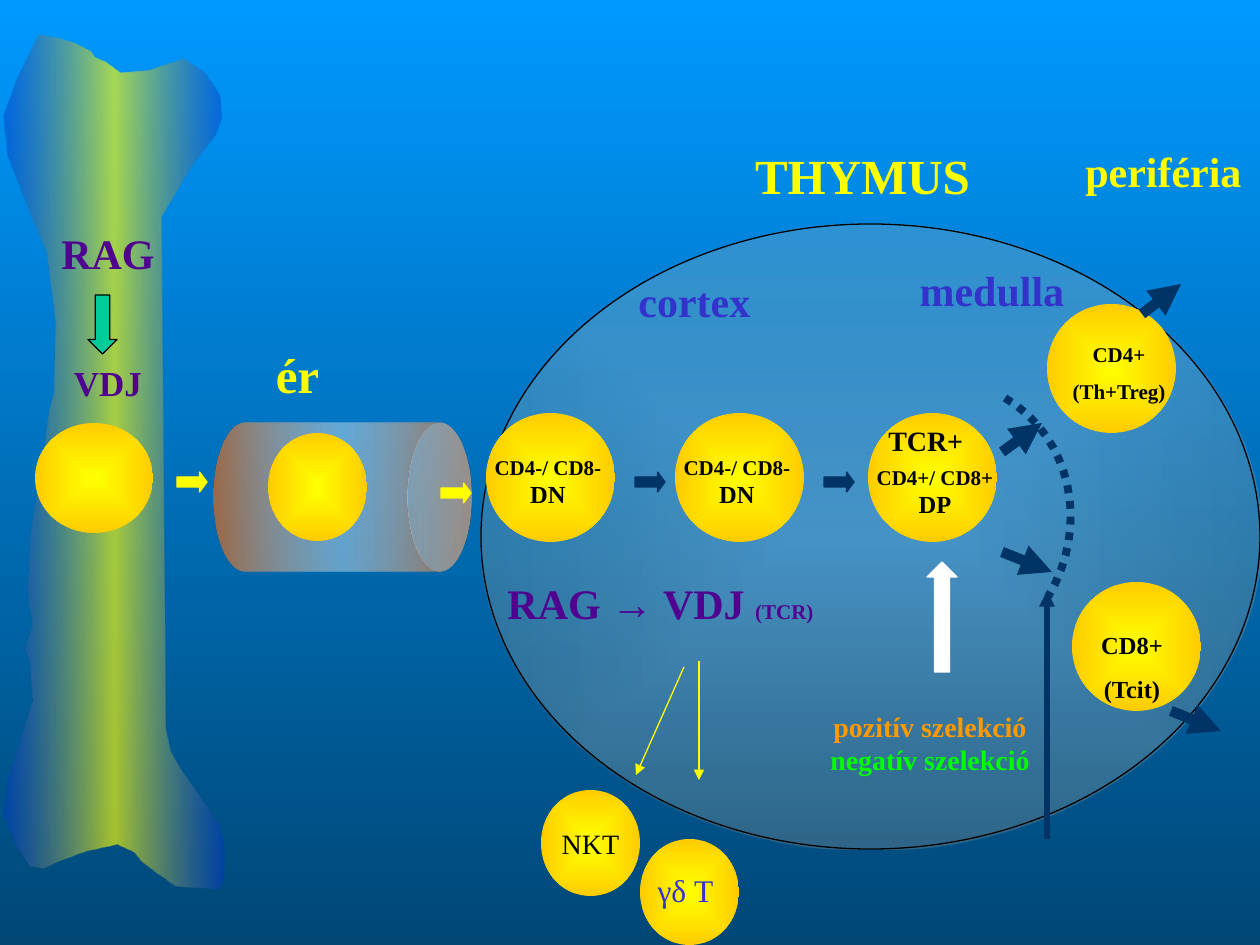
from dataclasses import dataclass
from typing import Any

from lxml import etree
from pptx import Presentation
from pptx import util as u
from pptx.dml import color as dml
from pptx.enum import dml as line_styles
from pptx.enum import shapes, text
from pptx.oxml import ns

PX = u.Inches(1) / 126
FONT = "Times New Roman"
COLORS = {
    "sky": "0099FF", "deep": "004776", "yellow": "FFFF00", "gold": "FFCC00",
    "navy": "003366", "purple": "4F018F", "blue": "3333CC", "black": "000000",
    "white": "FFFFFF", "orange": "FF9900", "green": "00FF00", "teal": "00CC99",
    "rust": "FF6600", "peach": "FFCC99", "cobalt": "0033CC",
}
CELL_STOPS = [(0, "yellow", 100), (100, "gold", 100)]
BONE_OUTLINE = [
    (25, 650), (33, 624), (28, 597), (31, 531), (42, 466), (49, 413), (54, 393),
    (56, 323), (47, 253), (30, 212), (8, 156), (4, 116), (18, 78), (33, 47),
    (39, 35), (57, 38), (76, 44), (91, 52), (95, 58), (105, 62), (120, 73),
    (147, 71), (168, 64), (183, 59), (204, 73), (214, 88), (219, 96), (221, 118),
    (215, 135), (190, 168), (161, 217), (165, 728), (170, 751), (180, 769),
    (209, 810), (212, 818), (219, 823), (224, 852), (223, 881), (218, 889),
    (175, 886), (154, 871), (141, 861), (134, 852), (117, 844), (86, 851),
    (59, 861), (44, 868), (30, 866), (15, 842), (4, 815), (9, 777), (20, 742),
    (28, 716), (33, 701), (30, 660),
]


def px(value):
    """Turn pixels into EMU."""
    return u.Emu(round(value * PX))


def rgb(name):
    """Look up a named colour."""
    return dml.RGBColor.from_string(COLORS[name])


def fill_gradient(shape, stops, angle=None):
    """Fill with (position, colour, opacity) stops, radially if no angle is given."""
    shape.fill.solid()
    properties = shape.element.spPr
    gradient = etree.Element(ns.qn("a:gradFill"), rotWithShape="1")
    stop_list = etree.SubElement(gradient, ns.qn("a:gsLst"))
    for position, name, opacity in stops:
        stop = etree.SubElement(stop_list, ns.qn("a:gs"), pos=str(position * 1000))
        color = etree.SubElement(stop, ns.qn("a:srgbClr"), val=COLORS[name])
        if opacity < 100:
            etree.SubElement(color, ns.qn("a:alpha"), val=str(opacity * 1000))
    if angle is None:
        path = etree.SubElement(gradient, ns.qn("a:path"), path="shape")
        etree.SubElement(path, ns.qn("a:fillToRect"), dict.fromkeys("ltrb", "50000"))
    else:
        etree.SubElement(gradient, ns.qn("a:lin"), ang=str(angle * 60000), scaled="0")
    properties.replace(properties.find(ns.qn("a:solidFill")), gradient)


def write(frame, paragraphs, align=text.PP_ALIGN.CENTER):
    """Write (wording, size, colour, bold, space before) paragraphs."""
    for index, (wording, size, color, bold, before) in enumerate(paragraphs):
        paragraph = frame.add_paragraph() if index else frame.paragraphs[0]
        paragraph.text = wording
        paragraph.alignment = align
        paragraph.space_before = u.Pt(before)
        font = paragraph.font
        font.name, font.size, font.bold = FONT, u.Pt(size), bold
        font.color.rgb = rgb(color)


@dataclass
class Region:
    """A part of the slide with its own origin in pixels."""
    slide: Any
    left: int
    top: int

    def box(self, x, y, width, height):
        """Return the slide position and size of a local box."""
        return px(self.left + x), px(self.top + y), px(width), px(height)

    def shape(self, kind, *box, fill=None, line=None):
        """Add a preset shape with optional plain fill and thin outline."""
        shape = self.slide.shapes.add_shape(kind, *self.box(*box))
        shape.shadow.inherit = False
        if fill:
            shape.fill.solid()
            shape.fill.fore_color.rgb = rgb(fill)
        if line:
            shape.line.color.rgb = rgb(line)
            shape.line.width = u.Pt(0.75)
        else:
            shape.line.fill.background()
        return shape

    def cell(self, x, y, width=129, height=129):
        """Add a golden round cell."""
        cell = self.shape(shapes.MSO_SHAPE.OVAL, x, y, width, height)
        fill_gradient(cell, CELL_STOPS)
        return cell

    def step(self, x, y, color):
        """Add a small block arrow pointing right."""
        arrow = self.shape(shapes.MSO_SHAPE.RIGHT_ARROW, x, y, 30, 20, fill=color, line=color)
        arrow.adjustments[1] = 0.37

    def label(self, box, *paragraphs, align=text.PP_ALIGN.CENTER):
        """Add a wrapped text box."""
        frame = self.slide.shapes.add_textbox(*self.box(*box)).text_frame
        frame.word_wrap = True
        write(frame, paragraphs, align)
        return frame

    def arrow(self, x1, y1, x2, y2, color="navy", width=6):
        """Add a straight line with an arrowhead at its end."""
        start, end = self.box(x1, y1, 0, 0)[:2], self.box(x2, y2, 0, 0)[:2]
        connector = self.slide.shapes.add_connector(shapes.MSO_CONNECTOR.STRAIGHT, *start, *end)
        connector.line.color.rgb = rgb(color)
        connector.line.width = u.Pt(width)
        etree.SubElement(connector.line._get_or_add_ln(), ns.qn("a:tailEnd"), type="triangle")
        etree.SubElement(connector.element.spPr, ns.qn("a:effectLst"))

    def outline(self, points, close):
        """Add a freeform through local points."""
        (x, y), *rest = [(self.left + x, self.top + y) for x, y in points]
        builder = self.slide.shapes.build_freeform(round(x * PX), round(y * PX), scale=1.0)
        builder.add_line_segments([(round(a * PX), round(b * PX)) for a, b in rest], close=close)
        shape = builder.convert_to_shape()
        shape.shadow.inherit = False
        return shape


def add_bone(region):
    """Draw the bone with its marrow cell and gene rearrangement."""
    bone = region.outline(BONE_OUTLINE, close=True)
    fill_gradient(bone, [(0, "cobalt", 43), (50, "yellow", 65), (100, "cobalt", 43)], angle=0)
    bone.line.fill.background()
    region.cell(35, 423, 118, 110)
    region.label((44, 221, 128, 204), ("RAG", 24, "purple", True, 0),
                 ("VDJ", 20, "purple", True, 48))
    region.shape(shapes.MSO_SHAPE.DOWN_ARROW, 88, 295, 29, 59, fill="teal", line="black")


def add_vessel(region):
    """Draw the blood vessel carrying a cell towards the thymus."""
    vessel = region.shape(shapes.MSO_SHAPE.CAN, 92, 34, 149, 258)
    vessel.rotation = 90
    vessel.adjustments[0] = 0.43
    fill_gradient(vessel, [(0, "rust", 60), (50, "white", 38), (100, "rust", 60)], angle=90)
    region.cell(92, 99, 99, 108)
    region.label((82, 4, 79, 72), ("ér", 28, "yellow", True, 0))
    region.step(1, 138, "yellow")
    region.step(265, 149, "yellow")


def add_thymus(region):
    """Draw the thymus with its maturing cells and selection."""
    thymus = region.shape(shapes.MSO_SHAPE.OVAL, 0, 0, 779, 625, line="black")
    fill_gradient(thymus, [(0, "white", 27), (100, "peach", 17)])
    stages = [(5, -20, 224, "CD4-/ CD8-", "DN"), (194, 169, 224, "CD4-/ CD8-", "DN"),
              (387, 367, 234, "CD4+/ CD8+", "DP")]
    for cell_x, label_x, label_y, markers, stage in stages:
        region.cell(cell_x, 189)
        region.label((label_x, label_y, 174, 72), (markers, 12, "black", True, 0),
                     (stage, 14, "black", True, 0))
    for x in (154, 343):
        region.step(x, 248, "navy")
    region.label((395, 193, 101, 47), ("TCR+", 16, "black", True, 0), align=text.PP_ALIGN.LEFT)
    region.label((233, -85, 297, 72), ("THYMUS", 28, "yellow", True, 0))
    region.label((119, 45, 189, 63), ("cortex", 24, "blue", True, 0))
    region.label((397, 34, 228, 63), ("medulla", 24, "blue", True, 0))
    genes = region.label((-4, 347, 367, 63), ("RAG → VDJ ", 24, "purple", True, 0))
    receptor = genes.paragraphs[0].add_run()
    receptor.text = "(TCR)"
    receptor.font.size = u.Pt(12)
    region.label((298, 479, 302, 81), ("pozitív szelekció", 16, "orange", True, 0),
                 ("negatív szelekció", 16, "green", True, 0))
    region.shape(shapes.MSO_SHAPE.UP_ARROW, 446, 338, 30, 110, fill="white", line="white")
    region.arrow(521, 328, 571, 348)
    region.arrow(521, 228, 561, 199)
    region.arrow(566, 615, 566, 367, width=3)
    add_border(region, (524, 174), (590, 213), (610, 301), (567, 373))


def add_border(region, *controls):
    """Draw the dotted curve where selection takes place."""
    steps = 16
    curve = []
    for t in (index / steps for index in range(steps + 1)):
        weights = ((1 - t) ** 3, 3 * t * (1 - t) ** 2, 3 * t ** 2 * (1 - t), t ** 3)
        curve.append(tuple(sum(w * point[axis] for w, point in zip(weights, controls))
                           for axis in (0, 1)))
    border = region.outline(curve, close=False)
    border.fill.background()
    border.line.color.rgb = rgb("navy")
    border.line.width = u.Pt(4.5)
    border.line.dash_style = line_styles.MSO_LINE.ROUND_DOT


def add_periphery(region):
    """Draw the mature cells leaving for the periphery."""
    region.label((20, 4, 193, 63), ("periféria", 24, "yellow", True, 0))
    region.cell(0, 169)
    region.cell(25, 447)
    region.label((5, 200, 134, 76), ("CD4+", 12, "black", True, 0),
                 ("(Th+Treg)", 12, "black", True, 7))
    region.label((25, 489, 120, 86), ("CD8+", 14, "black", True, 0),
                 ("(Tcit)", 14, "black", True, 8))
    region.arrow(95, 179, 134, 149)
    region.arrow(124, 576, 174, 596)


def add_side_lineages(region):
    """Draw the cells that branch off below the thymus."""
    region.arrow(158, 0, 158, 119, "yellow", 0.75)
    region.arrow(143, 6, 95, 114, "yellow", 0.75)
    region.cell(99, 178, 99, 106)
    region.label((50, 204, 189, 50), ("γδ T", 18, "blue", False, 0))
    frame = region.cell(0, 129, 99, 106).text_frame
    frame.word_wrap = False
    frame.vertical_anchor = text.MSO_ANCHOR.MIDDLE
    write(frame, [("NKT", 16, "black", False, 0)])


def main():
    """Build the slide and save it."""
    presentation = Presentation()
    presentation.slide_width, presentation.slide_height = px(1260), px(945)
    slide = presentation.slides.add_slide(presentation.slide_layouts[6])
    background = slide.background.fill
    background.gradient()
    background.gradient_angle = 270
    for stop, name in zip(background.gradient_stops, ("sky", "deep")):
        stop.color.rgb = rgb(name)
    add_bone(Region(slide, 0, 0))
    add_vessel(Region(slide, 176, 334))
    add_thymus(Region(slide, 481, 224))
    add_periphery(Region(slide, 1047, 135))
    add_side_lineages(Region(slide, 541, 661))
    presentation.save("out.pptx")


if __name__ == "__main__":
    main()
